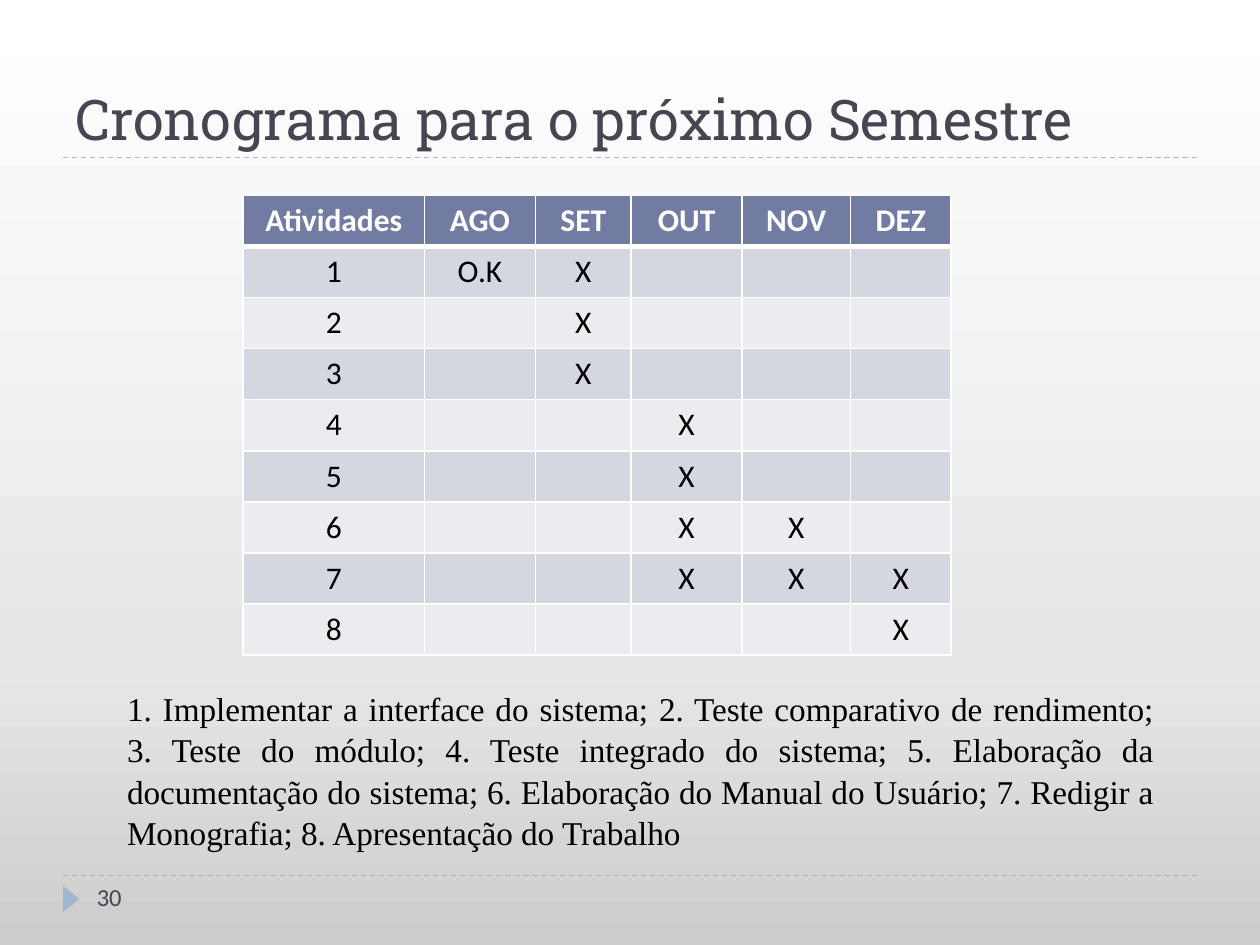
from copy import deepcopy

from lxml import etree
from pptx import Presentation, util as u
from pptx.dml.color import RGBColor
from pptx.enum import dml, shapes, text
from pptx.oxml import ns

Inches, Pt = u.Inches, u.Pt
COLORS = {
    "title": "464653", "accent": "9FB8CD", "header": "727CA3",
    "odd": "D5D7E0", "even": "EBECF0", "white": "FFFFFF", "black": "000000",
}
BACKGROUND = [(0, "CCCCCC"), (0.3, "E7E7E7"), (1, "FFFFFF")]
ALIGN = text.PP_ALIGN


def write(frame, words, size, font, color, align=ALIGN.LEFT, bold=False):
    frame.word_wrap = True
    para = frame.paragraphs[0]
    para.text = words
    para.alignment = align
    para.font.size = Pt(size)
    para.font.name = font
    para.font.bold = bold
    para.font.color.rgb = RGBColor.from_string(COLORS[color])
    return para


def add_border(cell, side, width):
    line = etree.SubElement(cell._tc.get_or_add_tcPr(), ns.qn(f"a:ln{side}"), w=str(Pt(width)))
    fill = etree.SubElement(line, ns.qn("a:solidFill"))
    etree.SubElement(fill, ns.qn("a:srgbClr"), val=COLORS["white"])


deck = Presentation()
deck.slide_width, deck.slide_height = Inches(10), Inches(7.5)
page = deck.slides.add_slide(deck.slide_layouts[6])

backdrop = page.background.fill
backdrop.gradient()
backdrop.gradient_angle = 90
stop_list = next(page.element.iter(ns.qn("a:gsLst")))
stop_list.insert(1, deepcopy(stop_list[0]))
for stop, (position, color) in zip(backdrop.gradient_stops, BACKGROUND):
    stop.position = position
    stop.color.rgb = RGBColor.from_string(color)

for y in (6.95, 1.25):
    rule = page.shapes.add_connector(
        shapes.MSO_CONNECTOR.STRAIGHT, Inches(0.5), Inches(y), Inches(9.5), Inches(y))
    rule.line.color.rgb = RGBColor.from_string(COLORS["accent"])
    rule.line.width = Pt(0.75)
    rule.line.dash_style = dml.MSO_LINE.DASH
    etree.SubElement(rule._element.spPr, ns.qn("a:effectLst"))

marker = page.shapes.add_shape(
    shapes.MSO_SHAPE.ISOSCELES_TRIANGLE, Inches(0.46), Inches(7.07), Inches(0.21), Inches(0.13))
marker.rotation = 90
marker.shadow.inherit = False
marker.fill.solid()
marker.fill.fore_color.rgb = RGBColor.from_string(COLORS["accent"])
marker.line.fill.background()

title = page.shapes.add_textbox(Inches(0.5), Inches(0.17), Inches(9), Inches(1.08))
title.text_frame.vertical_anchor = text.MSO_ANCHOR.BOTTOM
write(title.text_frame, "Cronograma para o próximo Semestre", 32, "Roboto Slab", "title")

number = page.shapes.add_textbox(Inches(0.67), Inches(6.95), Inches(2.17), Inches(0.4))
write(number.text_frame, "30", 14, "Calibri", "title")

schedule = [
    ["Atividades", "AGO", "SET", "OUT", "NOV", "DEZ"],
    ["1", "O.K", "X", "", "", ""],
    ["2", "", "X", "", "", ""],
    ["3", "", "X", "", "", ""],
    ["4", "", "", "X", "", ""],
    ["5", "", "", "X", "", ""],
    ["6", "", "", "X", "X", ""],
    ["7", "", "", "X", "X", "X"],
    ["8", "", "", "", "", "X"],
]
widths = [1.44, 0.88, 0.76, 0.88, 0.86, 0.8]
table = page.shapes.add_table(
    len(schedule), len(widths), Inches(1.93), Inches(1.55), Inches(5.62), Inches(3.65)).table
for column, width in zip(table.columns, widths):
    column.width = Inches(width)

for row, values in enumerate(schedule):
    header = row == 0
    background = "header" if header else "odd" if row % 2 else "even"
    for col, value in enumerate(values):
        cell = table.cell(row, col)
        write(cell.text_frame, value, 18, "Calibri",
              "white" if header else "black", ALIGN.CENTER, header)
        for side in "LRTB":
            thick = (header and side == "B") or (row == 1 and side == "T")
            add_border(cell, side, 3 if thick else 1)
        cell.fill.solid()
        cell.fill.fore_color.rgb = RGBColor.from_string(COLORS[background])

legend = page.shapes.add_textbox(Inches(0.91), Inches(5.4), Inches(8.35), Inches(1.38))
activities = write(
    legend.text_frame,
    "1. Implementar a interface do sistema; 2. Teste comparativo de rendimento; "
    "3. Teste do módulo; 4. Teste integrado do sistema; "
    "5. Elaboração da documentação do sistema; 6. Elaboração do Manual do Usuário; "
    "7. Redigir a Monografia; 8. Apresentação do Trabalho",
    19, "Times New Roman", "black", ALIGN.JUSTIFY)
activities.line_spacing = 1.04

deck.save("out.pptx")
